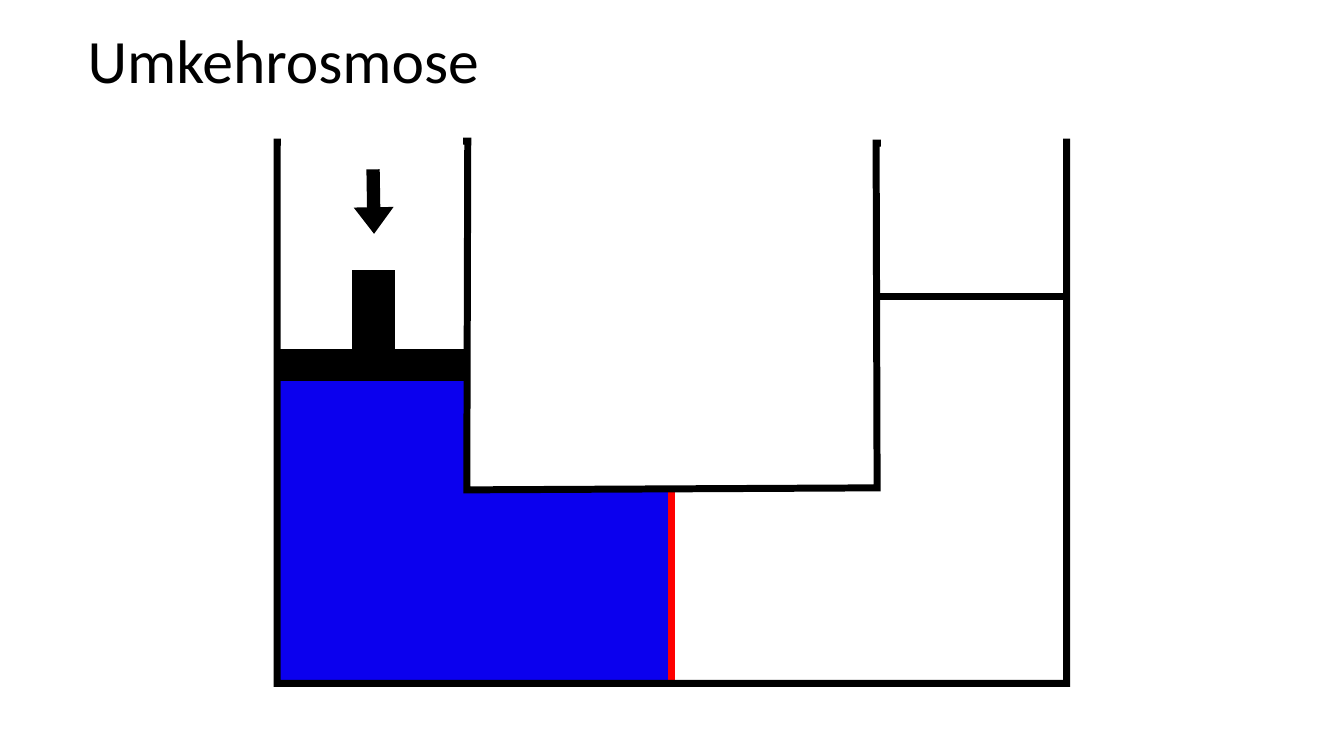
from lxml.etree import SubElement
from pptx import Presentation
from pptx.dml.color import RGBColor
from pptx.enum.shapes import MSO_CONNECTOR as CONN, MSO_SHAPE as SHAPE
from pptx.enum.text import MSO_ANCHOR as ANCHOR, PP_ALIGN as ALIGN
from pptx.oxml.ns import qn
from pptx.util import Pt

PX = 9144  # EMU per px, 100 px to the inch
COLORS = {"ink": "000000", "paper": "FFFFFF", "water": "0B00EE", "membrane": "FF0000"}


def rgb(name):
    return RGBColor.from_string(COLORS[name])


class Canvas:
    """Holds the line style and the current slide."""

    def __init__(self, prs, layout=5, weight=5):
        self.s = prs.slides.add_slide(prs.slide_layouts[layout])
        self.weight = weight

    def stroke(self, shape, color, weight=None):
        shape.line.color.rgb = rgb(color)
        shape.line.width = Pt(weight or self.weight)
        ln = shape.line._get_or_add_ln()
        SubElement(ln, qn("a:miter"), lim="800000")
        return ln

    def title(self, text, x, y, w, h, size):
        sp = self.s.shapes.title
        box = {"left": x, "top": y, "width": w, "height": h}
        for name, value in box.items():
            setattr(sp, name, value * PX)
        tf = sp.text_frame
        tf.text = text
        tf.word_wrap = True
        tf.vertical_anchor = ANCHOR.TOP
        p = tf.paragraphs[0]
        p.alignment, p.line_spacing = ALIGN.LEFT, 0.9
        r = p.runs[0]
        for name, value in {"name": "Calibri", "size": Pt(size)}.items():
            setattr(r.font, name, value)
        r.font.color.rgb = rgb("ink")

    def block(self, color, x, y, w, h):
        sp = self.s.shapes.add_shape(SHAPE.RECTANGLE, *(v * PX for v in (x, y, w, h)))
        sp.shadow.inherit = False
        sp.fill.solid()
        sp.fill.fore_color.rgb = rgb(color)
        self.stroke(sp, color)

    def line(self, color, x1, y1, x2, y2, weight=None, arrow=False):
        cn = self.s.shapes.add_connector(CONN.STRAIGHT, *(v * PX for v in (x1, y1, x2, y2)))
        ln = self.stroke(cn, color, weight)
        if arrow:
            SubElement(ln, qn("a:tailEnd"), type="triangle", w="med", len="sm")
        SubElement(cn._element.spPr, qn("a:effectLst"))

    def outline(self, color, points):
        fb = self.s.shapes.build_freeform(*points[0], scale=PX)
        fb.add_line_segments(points[1:], close=True)
        sp = fb.convert_to_shape()
        sp.shadow.inherit = False
        sp.fill.background()
        self.stroke(sp, color)


def main():
    prs = Presentation()
    prs.slide_width, prs.slide_height = 1333 * PX, 750 * PX
    c = Canvas(prs)
    c.title("Umkehrosmose", 77, 25, 1121, 113, size=44)

    # Salt water and membrane
    c.block("water", 334, 488, 332, 189)
    c.block("water", 278, 375, 185, 301)
    c.line("membrane", 666, 487, 666, 678)

    # U-shaped vessel, with both tubes open at the top
    c.outline("ink", [(275, 141), (464, 140), (463, 486), (870, 484),
                      (869, 142), (1058, 141), (1058, 678), (275, 678)])
    for x, y in ((282, 106), (877, 112)):
        c.block("paper", x, y, 174, 49)

    # Water level on the right
    c.line("ink", 868, 294, 1057, 294)

    # Piston and pressure arrow
    c.block("ink", 277, 350, 184, 25)
    c.block("ink", 353, 271, 35, 83)
    c.line("ink", 370, 168, 371, 232, weight=9.5, arrow=True)

    prs.save("out.pptx")


if __name__ == "__main__":
    main()
